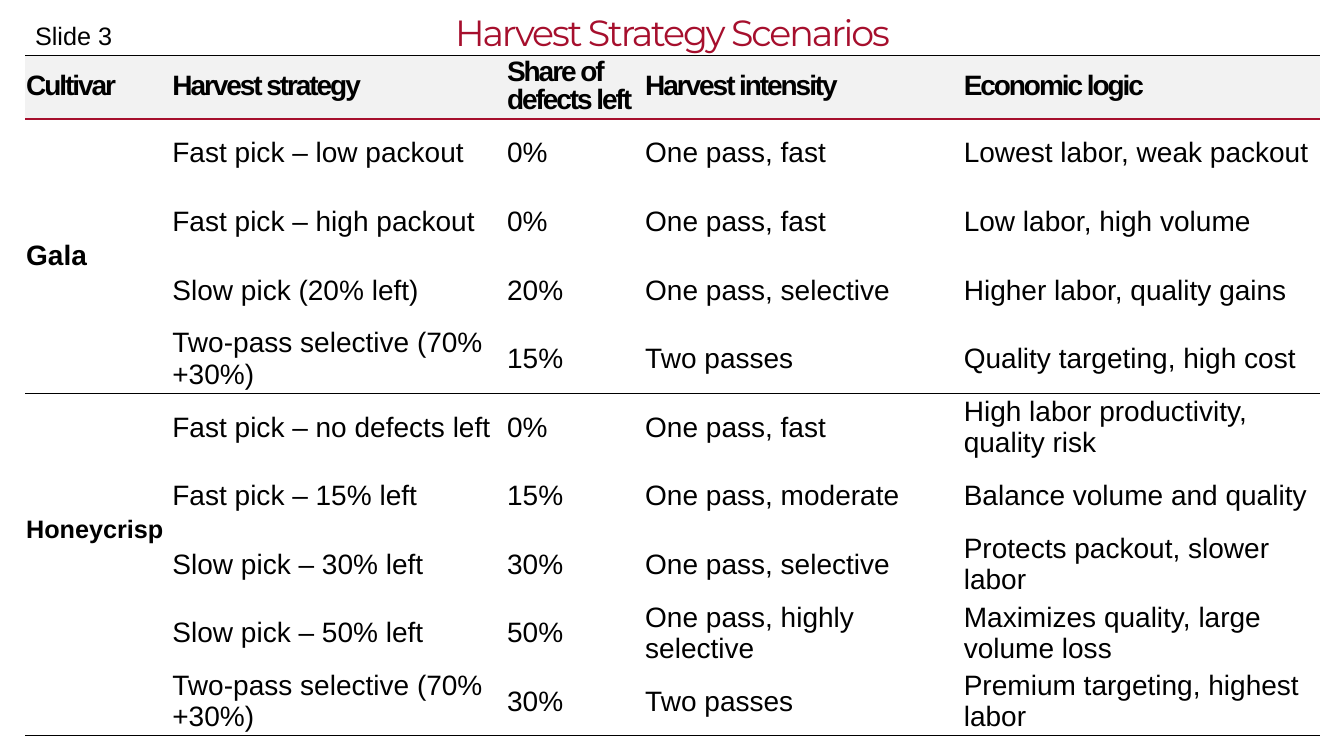
from dataclasses import dataclass

from lxml.etree import SubElement
from pptx import Presentation
from pptx.dml.color import RGBColor
from pptx.enum.text import MSO_ANCHOR, PP_ALIGN
from pptx.oxml import parse_xml
from pptx.oxml.ns import nsdecls, qn
from pptx.util import Inches, Pt


@dataclass(frozen=True)
class Theme:
    """Colours, fonts and type sizes of the slide."""
    accent: str = "A60F2D"
    ink: str = "000000"
    header_fill: str = "F2F2F2"
    title_font: str = "Montserrat"
    body_font: str = "Arial"
    title_size: int = 26
    table_size: int = 20
    small_size: int = 18
    tight: int = -150


THEME = Theme()
NO_GRID_STYLE = "{2D5ABB26-0587-4C30-8999-92F81FD0307C}"
COLUMN_WIDTHS = [1.45, 3.32, 1.37, 3.16, 3.54]
HEADER_HEIGHT, ROW_HEIGHT = 0.63, 0.68
HEADERS = ["Cultivar", "Harvest strategy", "Share of defects left",
           "Harvest intensity", "Economic logic"]
SCENARIOS = [
    ["Gala", "Fast pick – low packout", "0%", "One pass, fast", "Lowest labor, weak packout"],
    ["", "Fast pick – high packout", "0%", "One pass, fast", "Low labor, high volume"],
    ["", "Slow pick (20% left)", "20%", "One pass, selective", "Higher labor, quality gains"],
    ["", "Two-pass selective (70%+30%)", "15%", "Two passes", "Quality targeting, high cost"],
    ["Honeycrisp", "Fast pick – no defects left", "0%", "One pass, fast",
     "High labor productivity, quality risk"],
    ["", "Fast pick – 15% left", "15%", "One pass, moderate", "Balance volume and quality"],
    ["", "Slow pick – 30% left", "30%", "One pass, selective", "Protects packout, slower labor"],
    ["", "Slow pick – 50% left", "50%", "One pass, highly selective",
     "Maximizes quality, large volume loss"],
    ["", "Two-pass selective (70%+30%)", "30%", "Two passes", "Premium targeting, highest labor"],
]
CULTIVAR_ROWS = [(1, 4), (5, 8)]
RULES = {0: (THEME.ink, 0.5), 1: (THEME.accent, 1),
         5: (THEME.ink, 0.5), 10: (THEME.ink, 0.5)}


def add_span(para, text, size, font=THEME.body_font, color=THEME.ink, bold=False, spacing=0):
    """Add one formatted run to a paragraph."""
    span = para.add_run()
    span.text = text
    span.font.size = Pt(size)
    span.font.name = font
    span.font.bold = bold
    span.font.color.rgb = RGBColor.from_string(color)
    if spacing:
        span.font._element.set("spc", str(spacing))


def set_margins(holder, margin):
    """Give a cell or text frame the same margin on all sides."""
    holder.margin_left = holder.margin_right = Inches(margin)
    holder.margin_top = holder.margin_bottom = Inches(margin)


def add_title(page, left, top, width, height):
    """Place the centred slide title."""
    title = page.shapes.title
    title.left, title.top = Inches(left), Inches(top)
    title.width, title.height = Inches(width), Inches(height)
    frame = title.text_frame
    frame.word_wrap = True
    frame.vertical_anchor = MSO_ANCHOR.TOP
    set_margins(frame, 0)
    para = frame.paragraphs[0]
    para.alignment = PP_ALIGN.CENTER
    para.line_spacing = 0.9
    add_span(para, "Harvest Strategy Scenarios", THEME.title_size,
             THEME.title_font, THEME.accent, spacing=THEME.tight)


def add_slide_label(page, left, top, width, height):
    """Place the slide number label."""
    box = page.shapes.add_textbox(Inches(left), Inches(top), Inches(width), Inches(height))
    box.text_frame.word_wrap = True
    add_span(box.text_frame.paragraphs[0], "Slide 3", THEME.small_size)


def set_border(cell, side, rule):
    """Draw a horizontal rule on one side of a cell, or none."""
    color, points = rule or (None, 0)
    line = parse_xml(f'<a:{side} {nsdecls("a")} w="{Pt(points)}"/>')
    if color:
        fill = SubElement(line, qn("a:solidFill"))
        SubElement(fill, qn("a:srgbClr")).set("val", color)
    else:
        SubElement(line, qn("a:noFill"))
    cell._tc.get_or_add_tcPr().insert(0, line)


def format_cell(cell, text, row, column):
    """Fill one table cell with its text, shading and rules."""
    header = row == 0
    set_margins(cell, 0.01)
    cell.vertical_anchor = MSO_ANCHOR.MIDDLE
    if header:
        cell.fill.solid()
        cell.fill.fore_color.rgb = RGBColor.from_string(THEME.header_fill)
    else:
        cell.fill.background()
    last_edge = row + (cell.span_height if cell.is_merge_origin else 1)
    set_border(cell, "lnB", RULES.get(last_edge))
    set_border(cell, "lnT", RULES.get(row))
    if text:
        para = cell.text_frame.paragraphs[0]
        if header:
            para.line_spacing = 0.9
        size = THEME.small_size if text == "Honeycrisp" else THEME.table_size
        add_span(para, text, size, bold=header or column == 0,
                 spacing=THEME.tight if header else 0)


def add_scenario_table(page, left, top):
    """Place the table of harvest scenarios by cultivar."""
    rows = [HEADERS] + SCENARIOS
    height = HEADER_HEIGHT + ROW_HEIGHT * len(SCENARIOS)
    table = page.shapes.add_table(
        len(rows), len(HEADERS), Inches(left), Inches(top),
        Inches(sum(COLUMN_WIDTHS)), Inches(height)).table
    table.horz_banding = False
    table._tbl.tblPr.find(qn("a:tableStyleId")).text = NO_GRID_STYLE
    for column, width in zip(table.columns, COLUMN_WIDTHS):
        column.width = Inches(width)
    for index, row in enumerate(table.rows):
        row.height = Inches(ROW_HEIGHT if index else HEADER_HEIGHT)
    for first, last in CULTIVAR_ROWS:
        table.cell(first, 0).merge(table.cell(last, 0))
    for row, texts in enumerate(rows):
        for column, text in enumerate(texts):
            format_cell(table.cell(row, column), text, row, column)


def main():
    """Build and save the deck."""
    deck = Presentation()
    deck.slide_width, deck.slide_height = Inches(13.33), Inches(7.5)
    page = deck.slides.add_slide(deck.slide_layouts[5])
    add_title(page, 0.45, 0.15, 12.44, 0.55)
    add_scenario_table(page, 0.25, 0.55)
    add_slide_label(page, 0.25, 0.15, 9, 1)
    deck.save("out.pptx")


if __name__ == "__main__":
    main()
